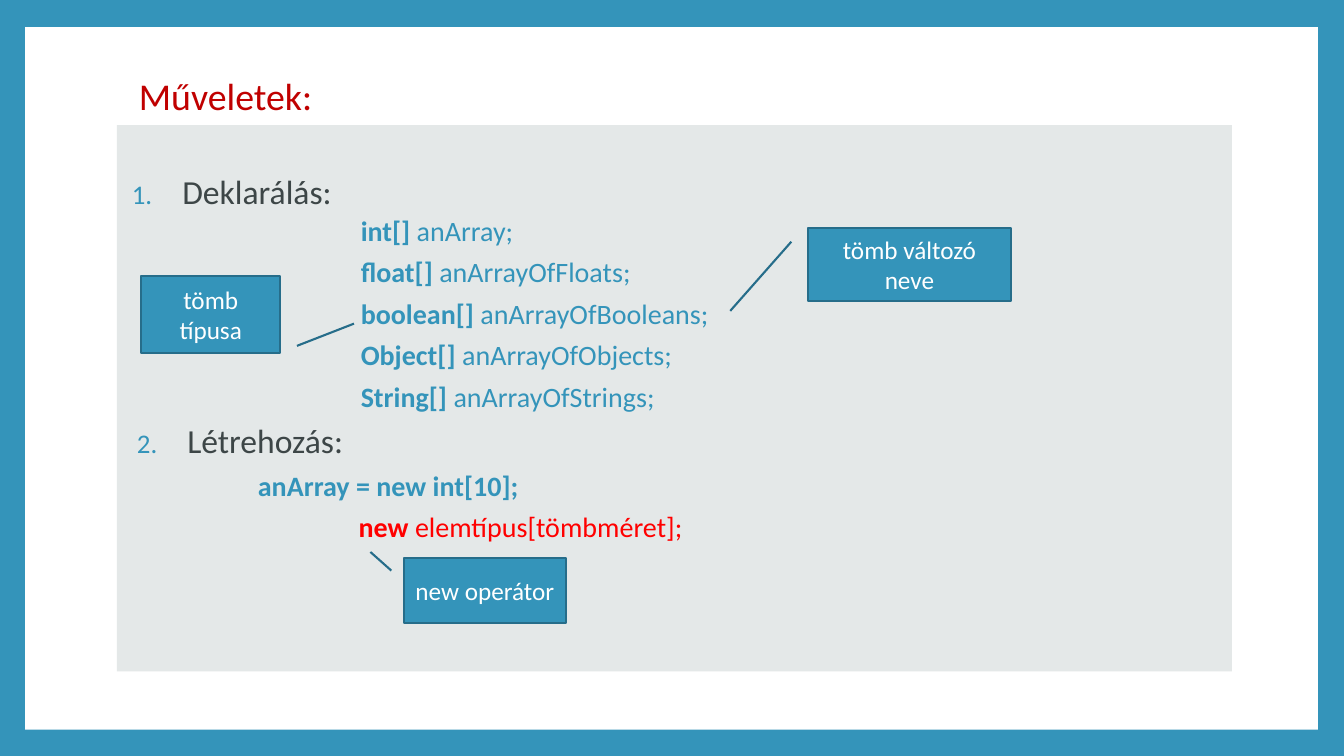
from lxml import etree
from pptx import Presentation
from pptx import util as u
from pptx.dml.color import RGBColor
from pptx.enum import shapes, text
from pptx.oxml import ns

BLUE = RGBColor(0x34, 0x94, 0xBA)
DARK_BLUE = RGBColor(0x26, 0x6D, 0x8A)
CRIMSON = RGBColor(0xC0, 0x00, 0x00)
RED = RGBColor(0xFF, 0x00, 0x00)
GREY = RGBColor(0xE4, 0xE8, 0xE8)
INK = RGBColor(0x3D, 0x46, 0x47)
WHITE = RGBColor(0xFF, 0xFF, 0xFF)
FONT = "Calibri"

DECLARATIONS = [
    ("int[] ", "anArray;"),
    ("float[] ", "anArrayOfFloats;"),
    ("boolean[] ", "anArrayOfBooleans;"),
    ("Object[] ", "anArrayOfObjects;"),
    ("String[] ", "anArrayOfStrings;"),
]
CALLOUTS = [
    ("tömb típusa", (1.4, 2.74, 1.38, 0.76), (0.62, 1.53, 0.91, 1.12)),
    ("tömb változó neve", (8.01, 2.26, 2.02, 0.73), (0.19, -0.08, 1.13, -0.38)),
    ("new operátor", (4.01, 5.54, 1.6, 0.64), (0.19, -0.08, -0.1, -0.21)),
]


def add_box(page, kind, bounds, fill):
    box = page.shapes.add_shape(kind, *map(u.Inches, bounds))
    box.shadow.inherit = False
    box.fill.solid()
    box.fill.fore_color.rgb = fill
    box.line.fill.background()
    return box


def add_span(para, words, size, color, bold=False):
    span = para.add_run()
    span.text = words
    span.font.name = FONT
    span.font.size = u.Pt(size)
    span.font.color.rgb = color
    span.font.bold = bold


def add_para(frame, indent, before=4, after=4, hanging=0):
    first = not frame.paragraphs[0].runs
    para = frame.paragraphs[0] if first else frame.add_paragraph()
    para.alignment = text.PP_ALIGN.LEFT
    para.line_spacing = 0.9
    para.space_before = u.Pt(before)
    para.space_after = u.Pt(after)
    props = para._p.get_or_add_pPr()
    props.set("marL", str(u.Inches(indent)))
    props.set("indent", str(u.Inches(-hanging)))
    return para


def add_heading(frame, number, words, indent, **spacing):
    para = add_para(frame, indent, hanging=0.5, **spacing)
    props = para._p.get_or_add_pPr()
    color = etree.SubElement(props, ns.qn("a:buClr"))
    etree.SubElement(color, ns.qn("a:srgbClr"), val=str(BLUE))
    etree.SubElement(props, ns.qn("a:buSzPct"), val="80000")
    etree.SubElement(props, ns.qn("a:buAutoNum"), type="arabicPeriod", startAt=str(number))
    add_span(para, words, 24, INK)


def add_title(page, bounds):
    box = page.shapes.add_textbox(*map(u.Inches, bounds))
    frame = box.text_frame
    frame.word_wrap = True
    frame.vertical_anchor = text.MSO_ANCHOR.MIDDLE
    add_span(add_para(frame, 0, 0, 0), "Műveletek:", 27, CRIMSON)


def add_body(page, bounds):
    box = add_box(page, shapes.MSO_SHAPE.RECTANGLE, bounds, GREY)
    frame = box.text_frame
    frame.word_wrap = True
    frame.vertical_anchor = text.MSO_ANCHOR.TOP
    frame.margin_top = u.Inches(0.5)
    add_heading(frame, 1, "Deklarálás:", 0.55, before=0, after=0)
    for kind, name in DECLARATIONS:
        para = add_para(frame, 2.32)
        add_span(para, kind, 20, BLUE, True)
        add_span(para, name, 20, BLUE)
    add_heading(frame, 2, "Létrehozás:", 0.6)
    add_span(add_para(frame, 1.3), "anArray = new int[10];", 20, BLUE, True)
    para = add_para(frame, 2.3)
    add_span(para, "new ", 20, RED, True)
    add_span(para, "elemtípus[tömbméret];", 20, RED)


def add_callout(page, words, bounds, pointer):
    box = add_box(page, shapes.MSO_SHAPE.LINE_CALLOUT_1, bounds, BLUE)
    box.line.color.rgb = DARK_BLUE
    box.line.width = u.Pt(1.5)
    for index, value in enumerate(pointer):
        box.adjustments[index] = value
    frame = box.text_frame
    frame.word_wrap = True
    frame.vertical_anchor = text.MSO_ANCHOR.MIDDLE
    para = frame.paragraphs[0]
    para.alignment = text.PP_ALIGN.CENTER
    add_span(para, words, 18, WHITE)


def main():
    deck = Presentation()
    deck.slide_width = u.Inches(13.33)
    deck.slide_height = u.Inches(7.5)
    page = deck.slides.add_slide(deck.slide_layouts[6])
    page.background.fill.solid()
    page.background.fill.fore_color.rgb = BLUE
    add_box(page, shapes.MSO_SHAPE.RECTANGLE, (0.25, 0.27, 12.82, 6.97), WHITE)
    add_title(page, (1.28, 0.74, 10.8, 0.46))
    add_body(page, (1.16, 1.24, 11.06, 5.42))
    for words, bounds, pointer in CALLOUTS:
        add_callout(page, words, bounds, pointer)
    deck.save("out.pptx")


if __name__ == "__main__":
    main()
